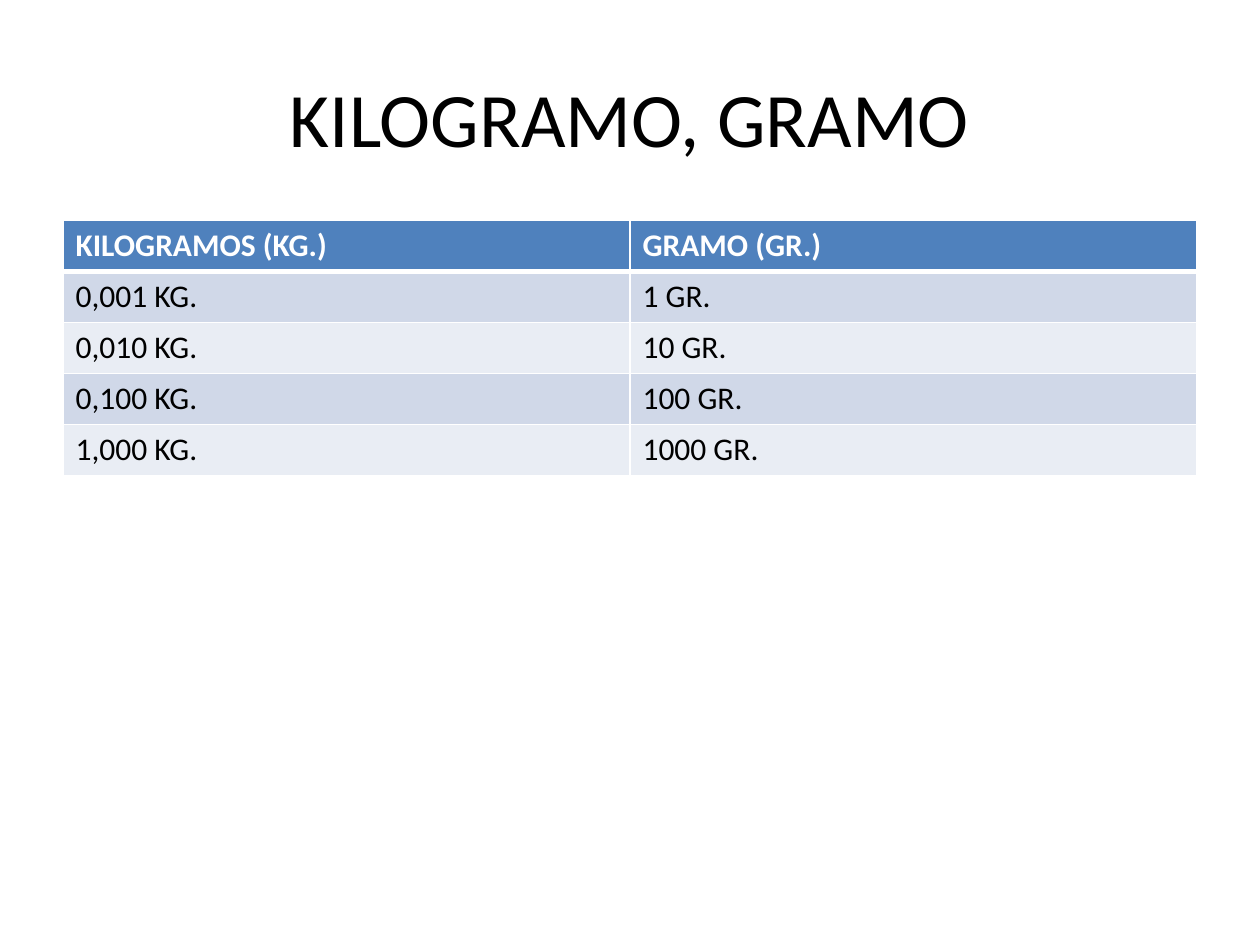
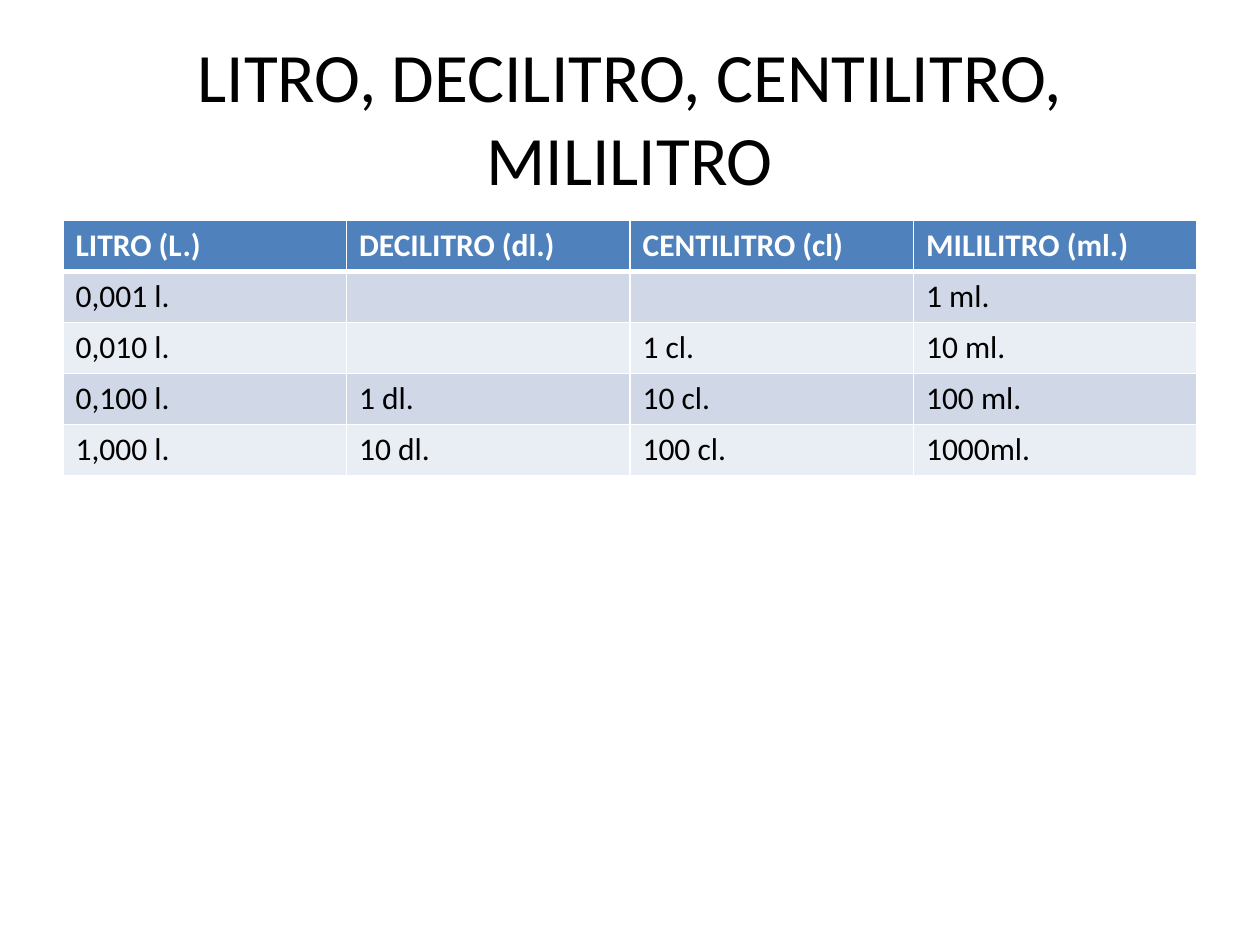
from dataclasses import dataclass

from lxml import etree
from pptx import Presentation
from pptx.dml.color import RGBColor
from pptx.enum.text import MSO_ANCHOR, PP_ALIGN
from pptx.oxml.ns import qn
from pptx.util import Inches, Pt

CENTER = PP_ALIGN.CENTER
MIDDLE = MSO_ANCHOR.MIDDLE


@dataclass(frozen=True)
class Theme:
    font: str = "Calibri"
    ink: str = "000000"
    paper: str = "FFFFFF"
    header: str = "4F81BD"
    bands: tuple[str, str] = ("D0D8E8", "E9EDF4")
    title_size: float = 44
    long_title_size: float = 39.6
    cell_size: float = 18
    rule: float = 1
    header_rule: float = 3


@dataclass(frozen=True)
class Unit_Slide:
    title: str
    title_size: float
    rows: tuple[tuple[str, ...], ...]


THEME = Theme()

# Layout: slide size, and places as shares of it
WIDTH, HEIGHT = Inches(10), Inches(7.5)
MARGIN = int(WIDTH * 0.05)
CONTENT_WIDTH = WIDTH - 2 * MARGIN
TITLE_TOP, TITLE_HEIGHT = int(HEIGHT * 0.04), HEIGHT // 6
TABLE_TOP, TABLE_HEIGHT = int(HEIGHT * 7 / 30), int(HEIGHT * 0.27)

# Content
UNIT_SLIDES = (
    Unit_Slide("KILOGRAMO, GRAMO", THEME.title_size, (
        ("KILOGRAMOS (KG.)", "GRAMO (GR.)"),
        ("0,001 KG.", "1 GR."),
        ("0,010 KG.", "10 GR."),
        ("0,100 KG.", "100 GR."),
        ("1,000 KG.", "1000 GR."),
    )),
    Unit_Slide("LITRO, DECILITRO, CENTILITRO, MILILITRO", THEME.long_title_size, (
        ("LITRO (L.)", "DECILITRO (dl.)", "CENTILITRO (cl)", "MILILITRO (ml.)"),
        ("0,001 l.", "", "", "1 ml."),
        ("0,010 l.", "", "1 cl.", "10 ml."),
        ("0,100 l.", "1 dl.", "10 cl.", "100 ml."),
        ("1,000 l.", "10 dl.", "100 cl.", "1000ml."),
    )),
)


def style_text(paragraph, size: float, color: str, bold: bool = False) -> None:
    font = paragraph.font
    for target in (font, *(run.font for run in paragraph.runs)):
        target.name = THEME.font
        target.size = Pt(size)
        target.bold = bold
        target.color.rgb = RGBColor.from_string(color)


def add_border(cell, side: str, points: float) -> None:
    properties = cell._tc.get_or_add_tcPr()
    line = etree.SubElement(properties, qn(f"a:ln{side}"), w=str(Pt(points)))
    fill = etree.SubElement(line, qn("a:solidFill"))
    etree.SubElement(fill, qn("a:srgbClr"), val=THEME.paper)


def add_title(slide, title: str, size: float) -> None:
    frame = slide.shapes.add_textbox(
        MARGIN, TITLE_TOP, CONTENT_WIDTH, TITLE_HEIGHT).text_frame
    frame.word_wrap = True
    frame.vertical_anchor = MIDDLE
    frame.text = title
    heading = frame.paragraphs[0]
    heading.alignment = CENTER
    style_text(heading, size, THEME.ink)


def fill_cell(cell, value: str, row: int) -> None:
    is_header = row == 0
    # The heavy rule lies between the header and the first band
    add_border(cell, "L", THEME.rule)
    add_border(cell, "R", THEME.rule)
    add_border(cell, "T", THEME.header_rule if row == 1 else THEME.rule)
    add_border(cell, "B", THEME.header_rule if is_header else THEME.rule)
    background = THEME.header if is_header else THEME.bands[(row - 1) % 2]
    cell.fill.solid()
    cell.fill.fore_color.rgb = RGBColor.from_string(background)
    cell.text_frame.text = value
    style_text(cell.text_frame.paragraphs[0], THEME.cell_size,
               THEME.paper if is_header else THEME.ink, is_header)


def add_equivalences(slide, rows: tuple[tuple[str, ...], ...]) -> None:
    table = slide.shapes.add_table(
        len(rows), len(rows[0]), MARGIN, TABLE_TOP,
        CONTENT_WIDTH, TABLE_HEIGHT).table
    for row, values in enumerate(rows):
        for column, value in enumerate(values):
            fill_cell(table.cell(row, column), value, row)


def main() -> None:
    deck = Presentation()
    deck.slide_width, deck.slide_height = WIDTH, HEIGHT
    blank = deck.slide_layouts[6]
    for unit in UNIT_SLIDES:
        slide = deck.slides.add_slide(blank)
        add_title(slide, unit.title, unit.title_size)
        add_equivalences(slide, unit.rows)
    deck.save("out.pptx")


if __name__ == "__main__":
    main()
